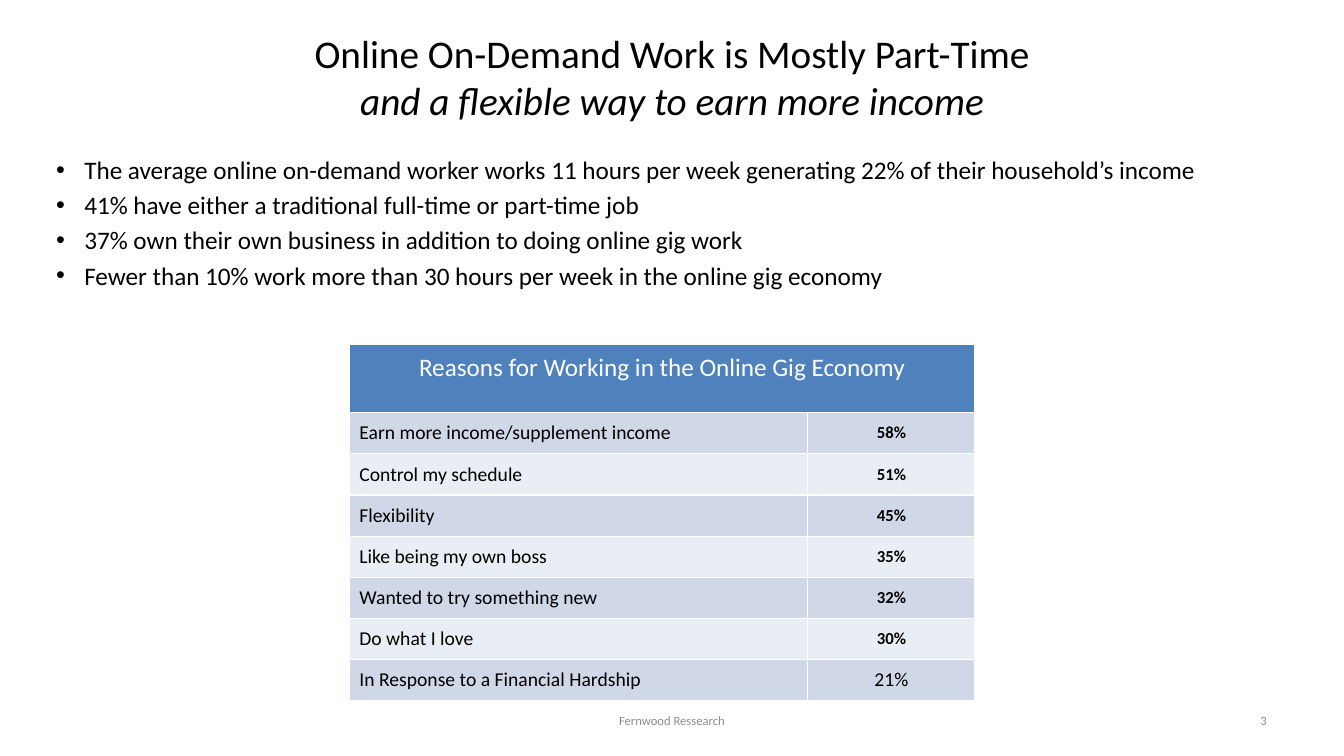
from dataclasses import dataclass

import pptx
import pptx.dml.color
import pptx.enum.text
import pptx.oxml.ns
import pptx.util
from lxml import etree

Pt = pptx.util.Pt
Align = pptx.enum.text.PP_ALIGN
Anchor = pptx.enum.text.MSO_ANCHOR
qn = pptx.oxml.ns.qn

FONT = "Calibri"
BLACK, WHITE, GREY = "000000", "FFFFFF", "8C8C8C"
HEADER_FILL = "4F81BD"
BAND_FILLS = ("D0D8E8", "E9EDF4")
HEADER_HEIGHT, REASON_HEIGHT = 49, 29.4
BULLET_INDENT = 20


@dataclass(frozen=True)
class Style:
    size: float
    color: str = BLACK
    bold: bool = False
    italic: bool = False


@dataclass(frozen=True)
class Box:
    left: float
    top: float
    width: float
    height: float


@dataclass(frozen=True)
class Reason:
    label: str
    share: str
    share_style: Style = Style(12, bold=True)


FINDINGS = (
    "The average online on-demand worker works 11 hours per week generating 22% of their household’s income",
    "41% have either a traditional full-time or part-time job",
    "37% own their own business in addition to doing online gig work",
    "Fewer than 10% work more than 30 hours per week in the online gig economy",
)

REASONS = (
    Reason("Earn more income/supplement income", "58%"),
    Reason("Control my schedule", "51%"),
    Reason("Flexibility", "45%"),
    Reason("Like being my own boss", "35%"),
    Reason("Wanted to try something new", "32%"),
    Reason("Do what I love", "30%"),
    Reason("In Response to a Financial Hardship", "21%", Style(14)),
)


def rgb(color: str) -> pptx.dml.color.RGBColor:
    return pptx.dml.color.RGBColor.from_string(color)


def add_run(paragraph, text: str, style: Style) -> None:
    run = paragraph.add_run()
    run.text = text
    run.font.name = FONT
    run.font.size = Pt(style.size)
    run.font.bold = style.bold
    run.font.italic = style.italic
    run.font.color.rgb = rgb(style.color)


def add_text_frame(slide, box: Box, anchor=Anchor.MIDDLE):
    frame = slide.shapes.add_textbox(
        Pt(box.left), Pt(box.top), Pt(box.width), Pt(box.height)
    ).text_frame
    frame.word_wrap = True
    frame.vertical_anchor = anchor
    return frame


def add_title(slide) -> None:
    title = add_text_frame(slide, Box(48, 9.4, 864, 90)).paragraphs[0]
    title.alignment = Align.CENTER
    title.font.size = Pt(28)
    add_run(title, "Online On-Demand Work is Mostly Part-Time", Style(28))
    title.add_line_break()
    add_run(title, "and a flexible way to earn more income", Style(28, italic=True))


def add_findings(slide) -> None:
    frame = add_text_frame(slide, Box(33.1, 106.6, 895, 167.8), Anchor.TOP)
    for index, finding in enumerate(FINDINGS):
        paragraph = frame.add_paragraph() if index else frame.paragraphs[0]
        paragraph.space_before = Pt(3.6)
        properties = paragraph._p.get_or_add_pPr()
        properties.set("marL", str(Pt(BULLET_INDENT)))
        properties.set("indent", str(-Pt(BULLET_INDENT)))
        etree.SubElement(properties, qn("a:buFont"), typeface="Arial")
        etree.SubElement(properties, qn("a:buChar"), char="•")
        add_run(paragraph, finding, Style(18))


def set_borders(cell, bottom_width: float = 1) -> None:
    """Draw white lines on all four sides, placed before the cell's fill."""
    properties = cell._tc.get_or_add_tcPr()
    widths = {"a:lnL": 1, "a:lnR": 1, "a:lnT": 1, "a:lnB": bottom_width}
    for position, (side, width) in enumerate(widths.items()):
        line = etree.Element(qn(side), w=str(Pt(width)))
        fill = etree.SubElement(line, qn("a:solidFill"))
        etree.SubElement(fill, qn("a:srgbClr"), val=WHITE)
        properties.insert(position, line)


def fill_cell(cell, text: str, style: Style, fill: str, align=Align.LEFT) -> None:
    cell.fill.solid()
    cell.fill.fore_color.rgb = rgb(fill)
    cell.vertical_anchor = Anchor.MIDDLE
    cell.margin_left = cell.margin_right = Pt(7.2)
    cell.margin_top = cell.margin_bottom = Pt(2.4)
    paragraph = cell.text_frame.paragraphs[0]
    paragraph.alignment = align
    add_run(paragraph, text, style)


def add_reasons_table(slide) -> None:
    height = HEADER_HEIGHT + REASON_HEIGHT * len(REASONS)
    table = slide.shapes.add_table(
        len(REASONS) + 1, 2, Pt(249.5), Pt(245.8), Pt(447), Pt(height)
    ).table
    table.columns[0].width, table.columns[1].width = Pt(327.5), Pt(119.5)

    table.rows[0].height = Pt(HEADER_HEIGHT)
    header = table.cell(0, 0)
    header.merge(table.cell(0, 1))
    fill_cell(header, "Reasons for Working in the Online Gig Economy",
              Style(18, WHITE), HEADER_FILL, Align.CENTER)
    header.margin_bottom = Pt(18)
    set_borders(header)

    for row, reason in enumerate(REASONS, start=1):
        table.rows[row].height = Pt(REASON_HEIGHT)
        fill = BAND_FILLS[(row - 1) % 2]
        label, share = table.cell(row, 0), table.cell(row, 1)
        fill_cell(label, reason.label, Style(14), fill)
        fill_cell(share, reason.share, reason.share_style, fill, Align.CENTER)
        set_borders(label)
        set_borders(share)


def add_footer(slide, text: str, box: Box, align) -> None:
    paragraph = add_text_frame(slide, box).paragraphs[0]
    paragraph.alignment = align
    add_run(paragraph, text, Style(9, GREY))


def main() -> None:
    deck = pptx.Presentation()
    deck.slide_width, deck.slide_height = Pt(960), Pt(540)
    slide = deck.slides.add_slide(deck.slide_layouts[6])
    add_title(slide)
    add_findings(slide)
    add_footer(slide, "Fernwood Ressearch", Box(328, 500.5, 304, 28.8), Align.CENTER)
    add_footer(slide, "3", Box(688, 500.5, 224, 28.8), Align.RIGHT)
    add_reasons_table(slide)
    deck.save("out.pptx")


if __name__ == "__main__":
    main()
